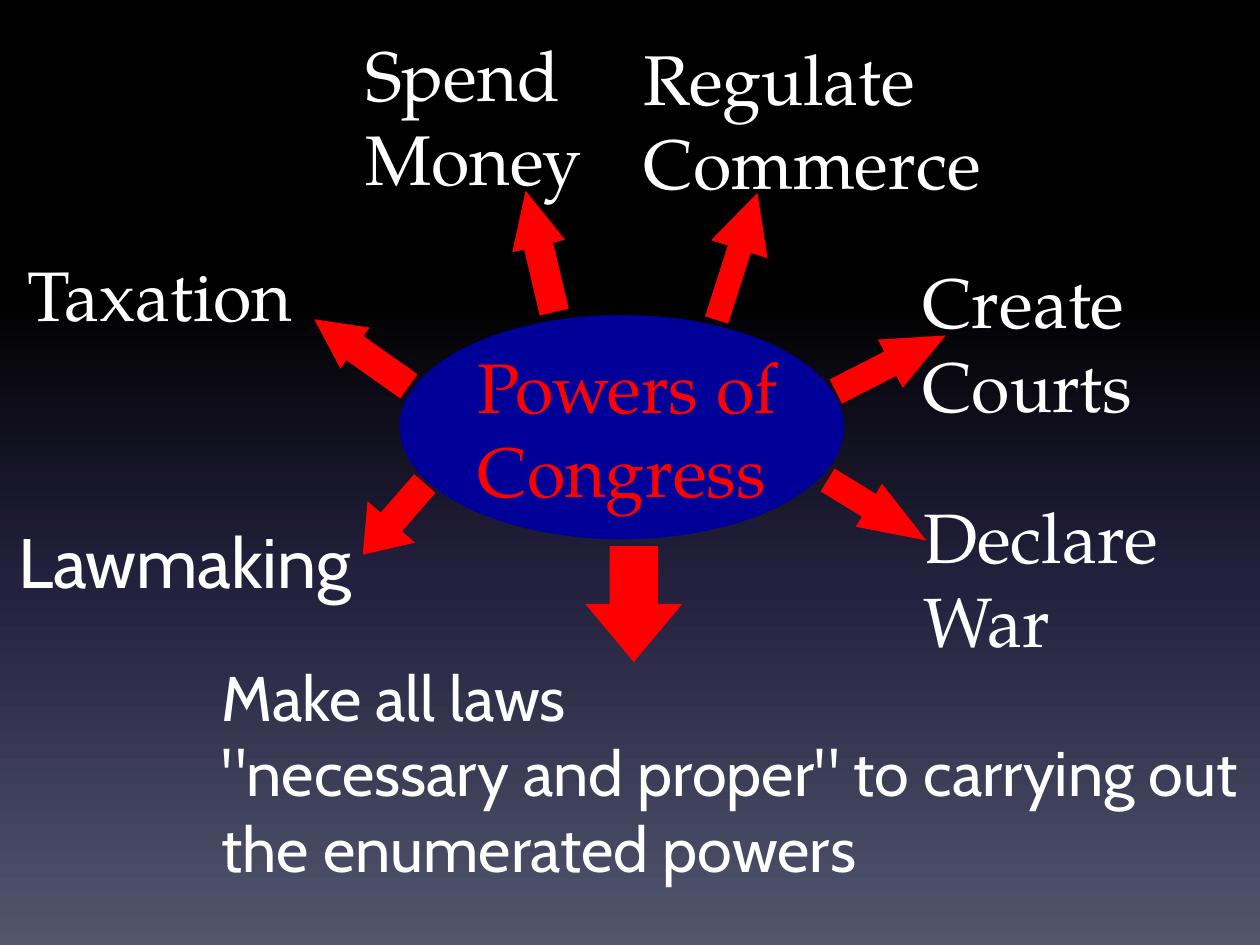
"""Build a slide with the powers of Congress radiating from a central oval."""
from lxml import etree
from pptx import Presentation
from pptx.dml.color import RGBColor
from pptx.enum.shapes import MSO_SHAPE
from pptx.enum.text import MSO_ANCHOR, MSO_AUTO_SIZE, PP_ALIGN
from pptx.oxml.ns import qn
from pptx.util import Inches, Pt

OVAL, ARROW, ROUNDED = MSO_SHAPE.OVAL, MSO_SHAPE.RIGHT_ARROW, MSO_SHAPE.ROUNDED_RECTANGLE
MIDDLE, LEFT, NO_FIT = MSO_ANCHOR.MIDDLE, PP_ALIGN.LEFT, MSO_AUTO_SIZE.NONE
RED = RGBColor(0xFF, 0x00, 0x00)
BLUE = RGBColor(0x00, 0x00, 0x99)
WHITE = RGBColor(0xFF, 0xFF, 0xFF)
BLACK = RGBColor(0x00, 0x00, 0x00)
INDIGO = RGBColor(0x24, 0x21, 0x3E)
SLATE = RGBColor(0x51, 0x56, 0x6D)
SERIF, SANS = "TeX Gyre Pagella", "Cabin"


def add_shape(kind, box, color=None):
    sp = s.shapes.add_shape(kind, *map(Inches, box))
    sp.shadow.inherit = False
    sp.line.fill.background()
    if color is None:
        sp.fill.background()
    else:
        sp.fill.solid()
        sp.fill.fore_color.rgb = color
    return sp


def set_text(sp, lines, font, size, color, wrap=False):
    tf = sp.text_frame
    tf.text = "\n".join(lines)
    tf.auto_size = NO_FIT
    tf.word_wrap = wrap
    tf.vertical_anchor = MIDDLE
    for p in tf.paragraphs:
        p.alignment = LEFT
        p.font.name, p.font.size, p.font.color.rgb = font, Pt(size), color


prs = Presentation()
prs.slide_width, prs.slide_height = Inches(10), Inches(7.5)
s = prs.slides.add_slide(prs.slide_layouts[5])

fill = s.background.fill
fill.gradient()
fill.gradient_angle = 270
stops = s.background._cSld.find(".//" + qn("a:gsLst"))
stops.clear()
for percent, color in [(0, BLACK), (31, BLACK), (62, INDIGO), (100, SLATE)]:
    stop = etree.SubElement(stops, qn("a:gs"), pos=str(percent * 1000))
    etree.SubElement(stop, qn("a:srgbClr"), val=str(color))

add_shape(OVAL, (3.17, 2.5, 3.53, 1.78), BLUE)
title = s.shapes.title
title.left, title.top, title.width, title.height = map(Inches, (3.69, 2.5, 2.8, 1.78))
set_text(title, ["Powers of", "Congress"], SERIF, 40, RED, wrap=True)
s.shapes._spTree.append(title._element)

powers = [
    (["Taxation"], SERIF, (0.08, 1.83, 2.75, 1)),
    (["Lawmaking"], SANS, (0, 3.82, 3.08, 1.26)),
    (["Declare", "War"], SERIF, (7.18, 3.91, 2.41, 1.34)),
    (["Regulate", "Commerce"], SERIF, (4.96, 0.25, 3.79, 1.39)),
    (["Spend", "Money"], SERIF, (2.75, 0.25, 2.17, 1.34)),
    (["Create", "Courts"], SERIF, (7.17, 2, 2.28, 1.44)),
]
for lines, font, box in powers:
    sp = add_shape(ROUNDED, box)
    sp.adjustments[0] = 0.125
    set_text(sp, lines, font, 40, WHITE)

arrows = [
    ((4.57, 4.41, 0.92, 0.77), 90, 0.5, 0.6),
    ((2.75, 3.87, 0.75, 0.5), 131.1, 0.45, 0.69),
    ((2.41, 2.6, 0.92, 0.4), 215.3, 0.59, 0.99),
    ((3.79, 1.78, 0.99, 0.43), 256.7, 0.55, 1.05),
    ((5.32, 1.8, 1.06, 0.47), 287.8, 0.41, 1),
    ((6.58, 2.67, 0.98, 0.43), 333, 0.5, 1.15),
    ((6.5, 3.85, 0.92, 0.4), 31.5, 0.53, 1.34),
]
for box, angle, shaft, head in arrows:
    sp = add_shape(ARROW, box, RED)
    sp.rotation = angle
    sp.adjustments[0], sp.adjustments[1] = shaft, head

clause = ["Make all laws", '"necessary and proper" to carrying out', "the enumerated powers"]
set_text(add_shape(OVAL, (0.26, 5, 9.55, 2.25)), clause, SANS, 36, WHITE)

prs.save("out.pptx")
